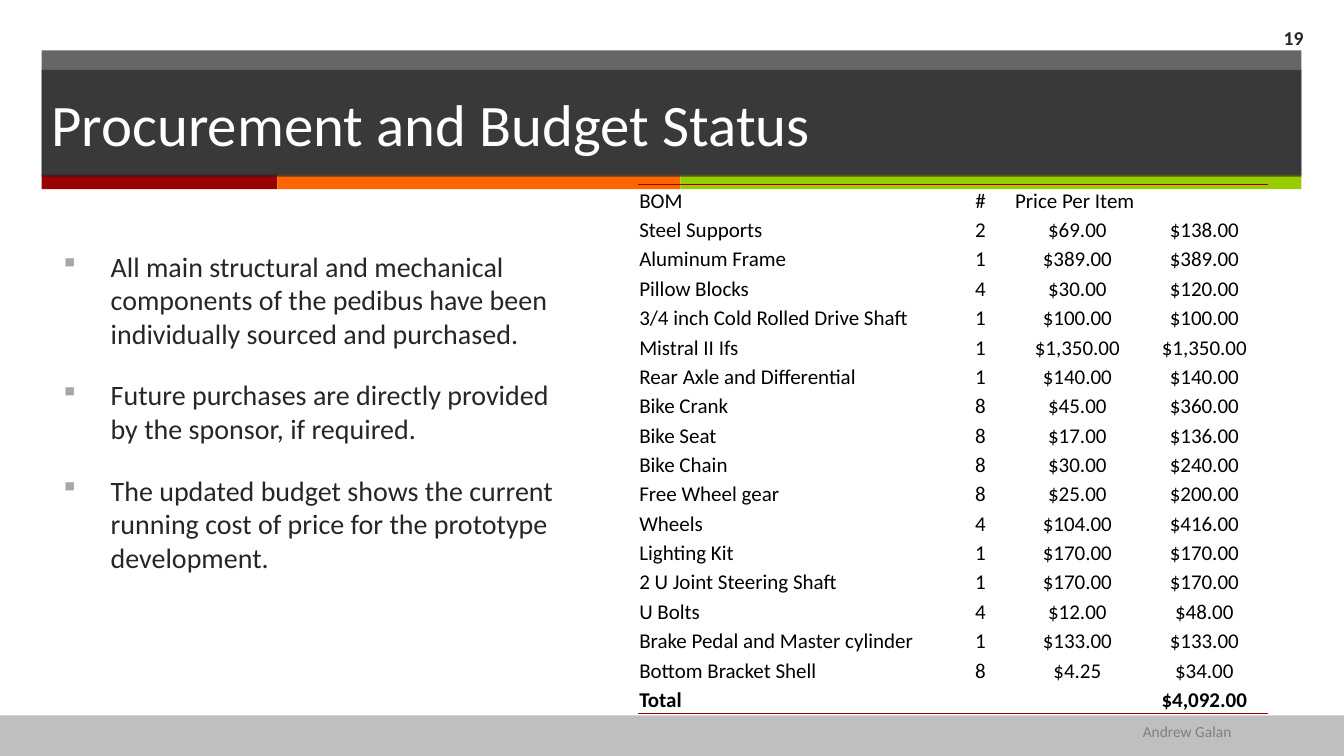
import pptx
import pptx.util
import pptx.dml.color
import pptx.enum.shapes
import pptx.enum.text
import pptx.oxml.ns
import lxml.etree

Cm = pptx.util.Cm
Pt = pptx.util.Pt
qn = pptx.oxml.ns.qn
ALIGN = pptx.enum.text.PP_ALIGN
ANCHOR = pptx.enum.text.MSO_ANCHOR
FONT = "Calibri"
DARK = "262626"
NO_STYLE = "{2D5ABB26-0587-4C30-8999-92F81FD0307C}"

POINTS = [
    "All main structural and mechanical components of the pedibus have been individually sourced and purchased.",
    "Future purchases are directly provided by the sponsor, if required.",
    "The updated budget shows the current running cost of price for the prototype development.",
]
ITEMS = [
    ("Steel Supports", "2", "$69.00", "$138.00"),
    ("Aluminum Frame", "1", "$389.00", "$389.00"),
    ("Pillow Blocks", "4", "$30.00", "$120.00"),
    ("3/4 inch Cold Rolled Drive Shaft", "1", "$100.00", "$100.00"),
    ("Mistral II Ifs", "1", "$1,350.00", "$1,350.00"),
    ("Rear Axle and Differential", "1", "$140.00", "$140.00"),
    ("Bike Crank", "8", "$45.00", "$360.00"),
    ("Bike Seat", "8", "$17.00", "$136.00"),
    ("Bike Chain", "8", "$30.00", "$240.00"),
    ("Free Wheel gear", "8", "$25.00", "$200.00"),
    ("Wheels", "4", "$104.00", "$416.00"),
    ("Lighting Kit", "1", "$170.00", "$170.00"),
    ("2 U Joint Steering Shaft", "1", "$170.00", "$170.00"),
    ("U Bolts", "4", "$12.00", "$48.00"),
    ("Brake Pedal and Master cylinder", "1", "$133.00", "$133.00"),
    ("Bottom Bracket Shell", "8", "$4.25", "$34.00"),
]
ROWS = [("BOM", "#", "Price Per Item", ""), *ITEMS, ("Total", "", "", "$4,092.00")]


def rgb(color):
    return pptx.dml.color.RGBColor.from_string(color)


def set_font(p, size, color, bold=False):
    p.font.name = FONT
    p.font.size = Pt(size)
    p.font.bold = bold
    p.font.color.rgb = rgb(color)


def add_rect(s, box, color, alpha=100):
    sp = s.shapes.add_shape(pptx.enum.shapes.MSO_SHAPE.RECTANGLE, *map(Cm, box))
    sp.shadow.inherit = False
    sp.fill.solid()
    sp.fill.fore_color.rgb = rgb(color)
    sp.line.fill.background()
    if alpha < 100:
        clr = sp.fill._xPr.find(".//" + qn("a:srgbClr"))
        lxml.etree.SubElement(clr, qn("a:alpha"), val=str(alpha * 1000))
    return sp


def write(sp, text, size, color, align=ALIGN.LEFT, anchor=ANCHOR.TOP, bold=False):
    tf = sp.text_frame
    tf.word_wrap = True
    tf.vertical_anchor = anchor
    p = tf.paragraphs[0]
    p.text = text
    p.alignment = align
    set_font(p, size, color, bold)


def add_header(s, box, title, number):
    x, y, w, h = box
    add_rect(s, (x, y, w, h - 0.36), DARK, 70)
    left = x
    for width, color in ((5.94, "990000"), (10.16, "FF6600"), (w - 16.1, "99CC00")):
        add_rect(s, (left, y + 3.13, width, h - 3.13), color)
        left += width
    sp = add_rect(s, (x, y + 0.49, w, 2.69), DARK, 70)
    write(sp, title, 42, "FFFFFF", anchor=ANCHOR.MIDDLE)
    sp = s.shapes.add_textbox(Cm(x + w - 2.04), Cm(y - 0.81), Cm(2.34), Cm(0.99))
    write(sp, number, 14, DARK, ALIGN.RIGHT, ANCHOR.MIDDLE, True)


def add_points(s, box, points):
    tf = s.shapes.add_textbox(*map(Cm, box)).text_frame
    tf.word_wrap = True
    for i, text in enumerate(points):
        p = tf.paragraphs[0] if i == 0 else tf.add_paragraph()
        p.text = text
        p.space_before = Pt(20)
        set_font(p, 20, DARK)
        pPr = p._p.get_or_add_pPr()
        pPr.set("marL", str(Cm(1.27)))
        pPr.set("indent", str(-Cm(1.27)))
        bullet = [lxml.etree.Element(qn("a:buClr")),
                  lxml.etree.Element(qn("a:buSzPct"), val="90000"),
                  lxml.etree.Element(qn("a:buChar"), char="▪")]
        lxml.etree.SubElement(bullet[0], qn("a:srgbClr"), val="A6A6A6")
        for el in bullet:
            pPr.find(qn("a:defRPr")).addprevious(el)


def add_border(cell, side, color):
    ln = lxml.etree.Element(qn("a:" + side), w=str(Pt(1)))
    fill = lxml.etree.SubElement(ln, qn("a:solidFill"))
    lxml.etree.SubElement(fill, qn("a:srgbClr"), val=color)
    cell._tc.get_or_add_tcPr().insert(0, ln)


def fill_cell(cell, text, align, bold):
    cell.margin_left = cell.margin_right = cell.margin_top = Cm(0.03)
    cell.margin_bottom = 0
    cell.vertical_anchor = ANCHOR.BOTTOM
    cell.fill.background()
    p = cell.text_frame.paragraphs[0]
    p.text = text
    p.alignment = align
    set_font(p, 15, "000000", bold)
    if not text:
        lxml.etree.SubElement(p._p, qn("a:endParaRPr"), sz="1500")


def add_budget(s, box, rows):
    widths = (7.38, 0.41, 1.68, 3.2, 3.2)
    table = s.shapes.add_table(len(rows), len(widths), *map(Cm, box)).table
    table.first_row = table.horz_banding = False
    table._tbl.tblPr.find(qn("a:tableStyleId")).text = NO_STYLE
    for column, width in zip(table.columns, widths):
        column.width = Cm(width)
    last = len(rows) - 1
    for r, (name, *values) in enumerate(rows):
        table.rows[r].height = Cm(box[3] / len(rows))
        for c, text in enumerate((name, "", *values)):
            left = c == 0 or (r == 0 and c == 3)
            cell = table.cell(r, c)
            fill_cell(cell, text, ALIGN.LEFT if left else ALIGN.CENTER, r == last)
            if r in (0, last):
                add_border(cell, "lnT" if r == 0 else "lnB", "990000")
    table.cell(0, 3).merge(table.cell(0, 4))


def add_footer(s, box, author):
    x, y, w, h = box
    add_rect(s, box, "BFBFBF")
    sp = s.shapes.add_textbox(Cm(x + 28.55), Cm(y + 0.05), Cm(3.5), Cm(0.74))
    write(sp, author, 11, "808080")


def main():
    prs = pptx.Presentation()
    prs.slide_width, prs.slide_height = Cm(33.87), Cm(19.05)
    s = prs.slides.add_slide(prs.slide_layouts[6])
    add_footer(s, (0, 18.03, 33.87, 1.02), "Andrew Galan")
    add_header(s, (1.05, 1.27, 31.75, 3.5), "Procurement and Budget Status", "19")
    add_points(s, (1.27, 6.15, 13.13, 11.63), POINTS)
    add_budget(s, (16.08, 4.65, 15.87, 13.33), ROWS)
    prs.save("out.pptx")


if __name__ == "__main__":
    main()
